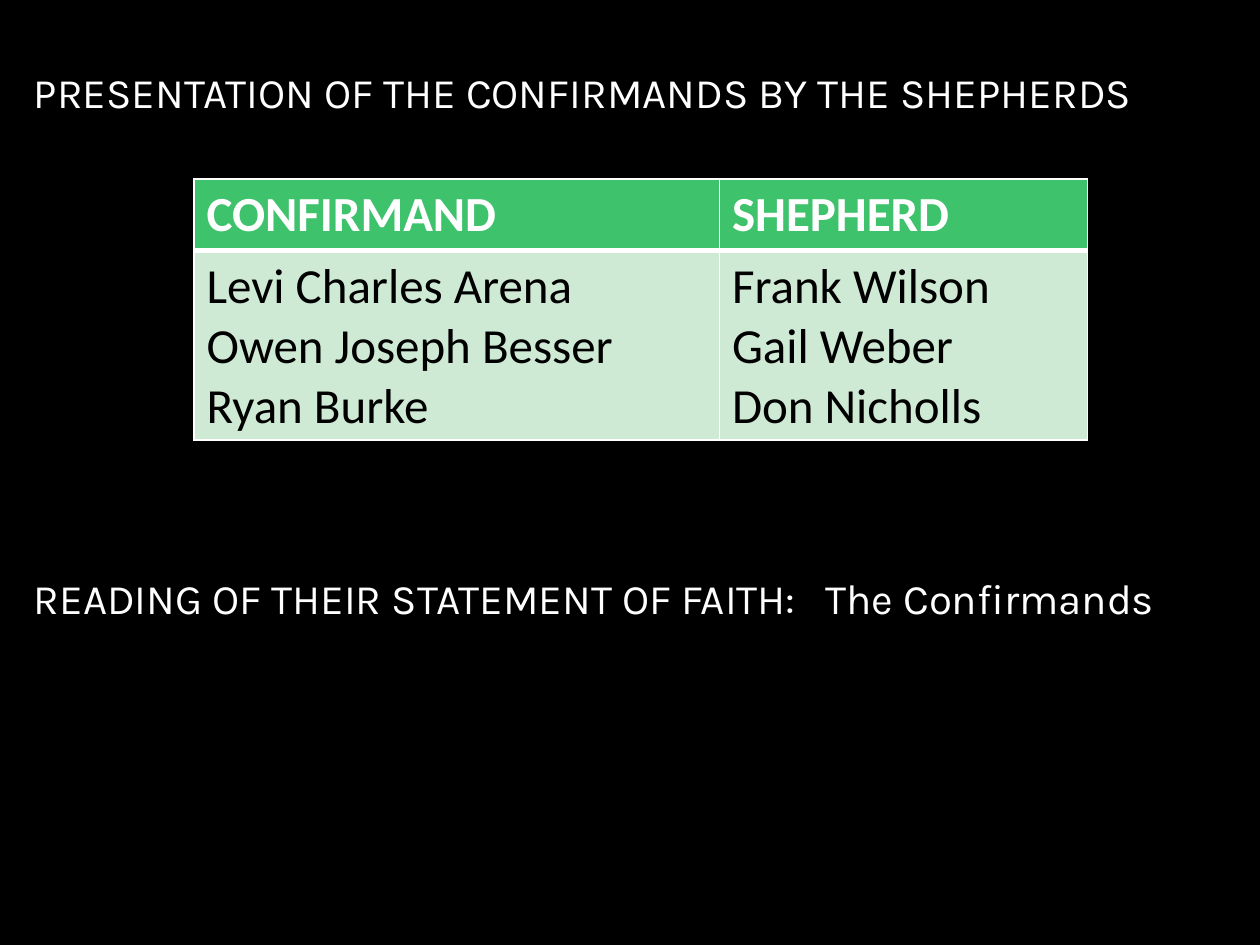
from dataclasses import dataclass

from lxml import etree
from pptx import Presentation
from pptx import util as u
from pptx.dml.color import RGBColor
from pptx.enum import text
from pptx.oxml import ns

COLOURS = {
    "background": "000000",
    "white": "FFFFFF",
    "black": "000000",
    "header": "3EC26C",
    "body": "CEE9D4",
}


@dataclass(frozen=True)
class Style:
    font: str
    size: float
    colour: str
    bold: bool = False


@dataclass(frozen=True)
class TableRow:
    height: float
    cells: tuple[tuple[str, ...], ...]
    fill: str
    style: Style
    borders: dict[str, float]


LITURGY = Style("Karla", 24, "white")
ROWS = (
    TableRow(
        0.57,
        (("CONFIRMAND",), ("SHEPHERD",)),
        "header",
        Style("Calibri", 28, "white", True),
        {"lnL": 1, "lnR": 1, "lnT": 1, "lnB": 3},
    ),
    TableRow(
        1.5,
        (
            ("Levi Charles Arena", "Owen Joseph Besser", "Ryan Burke"),
            ("Frank Wilson", "Gail Weber", "Don Nicholls"),
        ),
        "body",
        Style("Calibri", 28, "black"),
        {"lnL": 1, "lnR": 1, "lnT": 3, "lnB": 1},
    ),
)
COLUMN_WIDTHS = (4.17, 2.92)


def colour(name: str) -> RGBColor:
    return RGBColor.from_string(COLOURS[name])


def write_lines(frame, lines: tuple[str, ...], style: Style, gap: float = 0) -> None:
    for index, line in enumerate(lines):
        para = frame.add_paragraph() if index else frame.paragraphs[0]
        if index and gap:
            para.space_before = u.Pt(gap)
        span = para.add_run()
        span.text = line
        span.font.name = style.font
        span.font.size = u.Pt(style.size)
        span.font.bold = style.bold
        span.font.color.rgb = colour(style.colour)


def draw_borders(cell, widths: dict[str, float]) -> None:
    properties = cell._tc.get_or_add_tcPr()
    for index, (side, width) in enumerate(widths.items()):
        line = etree.Element(ns.qn(f"a:{side}"), w=str(u.Pt(width)))
        fill = etree.SubElement(line, ns.qn("a:solidFill"))
        etree.SubElement(fill, ns.qn("a:srgbClr"), val=COLOURS["white"])
        properties.insert(index, line)


def draw_liturgy(page) -> None:
    box = page.shapes.add_textbox(
        u.Inches(0.17), u.Inches(0.48), u.Inches(9.83), u.Inches(5.42)
    )
    frame = box.text_frame
    frame.word_wrap = True
    frame.auto_size = text.MSO_AUTO_SIZE.SHAPE_TO_FIT_TEXT
    lines = (
        "PRESENTATION OF THE CONFIRMANDS BY THE SHEPHERDS",
        "READING OF THEIR STATEMENT OF FAITH:   The Confirmands",
    )
    write_lines(frame, lines, LITURGY, gap=260)


def draw_table(page) -> None:
    table = page.shapes.add_table(
        len(ROWS),
        len(COLUMN_WIDTHS),
        u.Inches(1.54),
        u.Inches(1.42),
        u.Inches(sum(COLUMN_WIDTHS)),
        u.Inches(sum(row.height for row in ROWS)),
    ).table
    for column, width in zip(table.columns, COLUMN_WIDTHS):
        column.width = u.Inches(width)
    for row_index, row in enumerate(ROWS):
        table.rows[row_index].height = u.Inches(row.height)
        for column_index, lines in enumerate(row.cells):
            cell = table.cell(row_index, column_index)
            cell.fill.solid()
            cell.fill.fore_color.rgb = colour(row.fill)
            write_lines(cell.text_frame, lines, row.style)
            draw_borders(cell, row.borders)


def main() -> None:
    deck = Presentation()
    deck.slide_width = u.Inches(10)
    deck.slide_height = u.Inches(7.5)
    page = deck.slides.add_slide(deck.slide_layouts[6])
    page.background.fill.solid()
    page.background.fill.fore_color.rgb = colour("background")
    draw_liturgy(page)
    draw_table(page)
    deck.save("out.pptx")


if __name__ == "__main__":
    main()
